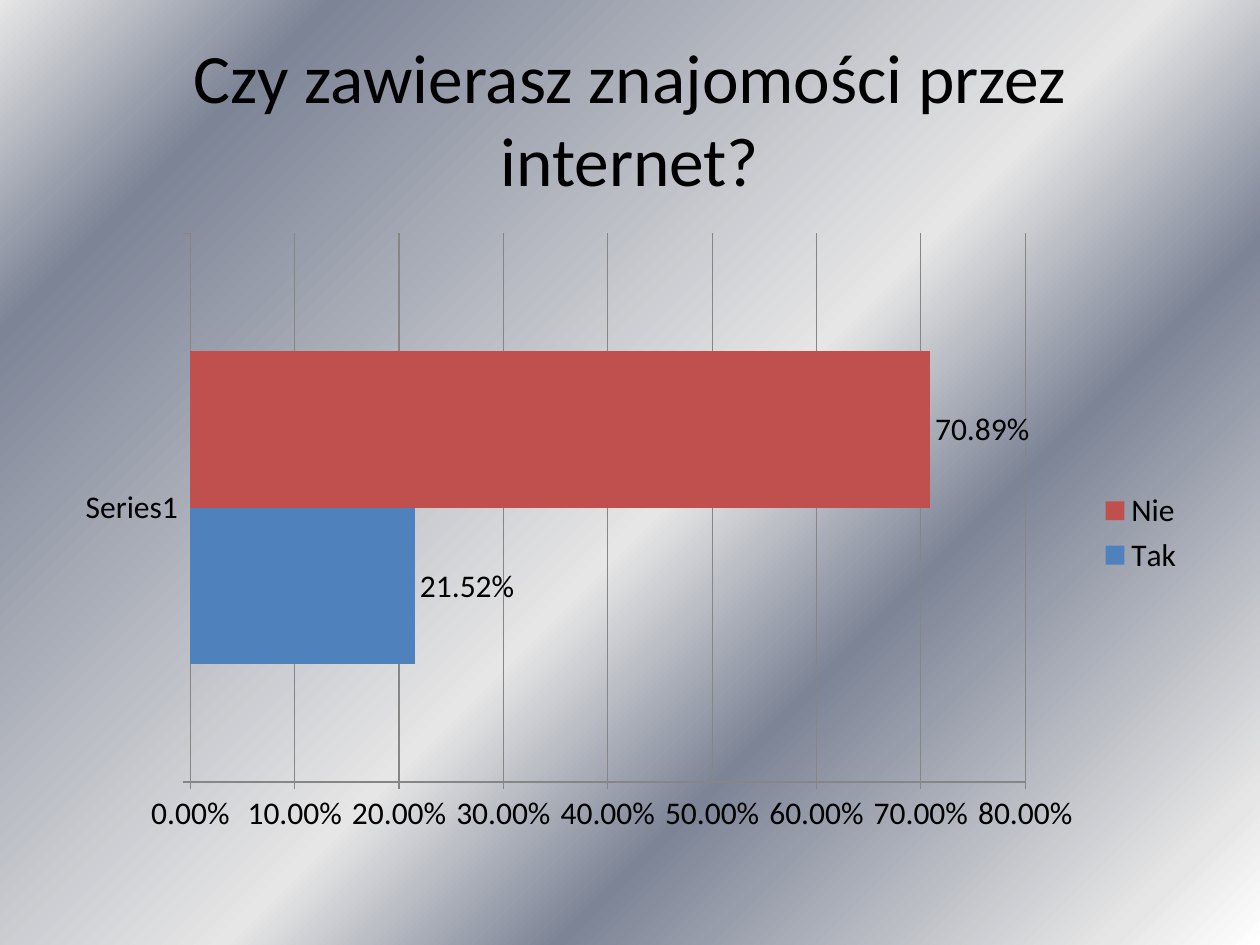
import pptx
import pptx.chart.data
import pptx.dml.color
import pptx.enum.chart
import pptx.enum.text
import pptx.oxml.ns
import pptx.util
import lxml.etree

# Content
TITLE = "Czy zawierasz znajomości przez internet?"
GROUP = "Series1"
BARS = [("Tak", 0.2152, "blue"), ("Nie", 0.7089, "red")]
STOPS = [(0, "white"), (7, "pale"), (32, "slate"),
         (47, "pale"), (85, "slate"), (100, "pale")]
HUES = {"white": "FFFFFF", "pale": "E6E6E6", "slate": "7D8496",
        "blue": "4F81BD", "red": "C0504D", "ink": "000000", "line": "868686"}
FONT = "Calibri"
FORMAT = "0.00%"
SCALE = 914400 / 126
SIZE = (1260, 945)
HEAD = (63, 38, 1134, 158)
PLOT = (63, 221, 1134, 624)


def emu(box):
    return [pptx.util.Emu(round(n * SCALE)) for n in box]


def hue(name):
    return pptx.dml.color.RGBColor.from_string(HUES[name])


def style(font, size):
    font.name = FONT
    font.size = pptx.util.Pt(size)
    font.color.rgb = hue("ink")


def rule(line):
    line.color.rgb = hue("line")
    line.width = pptx.util.Pt(0.75)


deck = pptx.Presentation()
deck.slide_width, deck.slide_height = emu(SIZE)
slide = deck.slides.add_slide(deck.slide_layouts[5])

# Diagonal gradient background, starting at the bottom right
fill = slide.background.fill
fill.gradient()
fill.gradient_angle = 135
qn = pptx.oxml.ns.qn
stops = next(slide.element.iter(qn("a:gsLst")))
for old in list(stops):
    stops.remove(old)
for spot, name in STOPS:
    stop = lxml.etree.SubElement(stops, qn("a:gs"), pos=str(spot * 1000))
    lxml.etree.SubElement(stop, qn("a:srgbClr"), val=HUES[name])

# Title
title = slide.shapes.title
title.left, title.top, title.width, title.height = emu(HEAD)
frame = title.text_frame
frame.word_wrap = True
frame.vertical_anchor = pptx.enum.text.MSO_ANCHOR.MIDDLE
para = frame.paragraphs[0]
para.alignment = pptx.enum.text.PP_ALIGN.CENTER
run = para.add_run()
run.text = TITLE
style(run.font, 39.6)

# Bar chart
data = pptx.chart.data.CategoryChartData(number_format=FORMAT)
data.categories = [GROUP]
for name, value, _ in BARS:
    data.add_series(name, [value])
kinds = pptx.enum.chart
chart = slide.shapes.add_chart(
    kinds.XL_CHART_TYPE.BAR_CLUSTERED, *emu(PLOT), data).chart
style(chart.font, 18)
chart.has_title = False
chart.has_legend = True
chart.legend.position = kinds.XL_LEGEND_POSITION.RIGHT
chart.legend.include_in_layout = False

# Axes
for axis in (chart.category_axis, chart.value_axis):
    axis.major_tick_mark = kinds.XL_TICK_MARK.OUTSIDE
    axis.minor_tick_mark = kinds.XL_TICK_MARK.NONE
    rule(axis.format.line)
chart.category_axis.has_major_gridlines = False
scale = chart.value_axis
scale.has_major_gridlines = True
rule(scale.major_gridlines.format.line)
scale.tick_labels.number_format = FORMAT
scale.tick_labels.number_format_is_linked = False

# Bars and their values
plot = chart.plots[0]
plot.gap_width = 150
plot.vary_by_categories = False
for series, (_, _, name) in zip(plot.series, BARS):
    series.invert_if_negative = False
    series.format.fill.solid()
    series.format.fill.fore_color.rgb = hue(name)
    labels = series.data_labels
    labels.show_value = True
    labels.position = kinds.XL_LABEL_POSITION.OUTSIDE_END
    labels.number_format = FORMAT
    labels.number_format_is_linked = False

deck.save("out.pptx")
